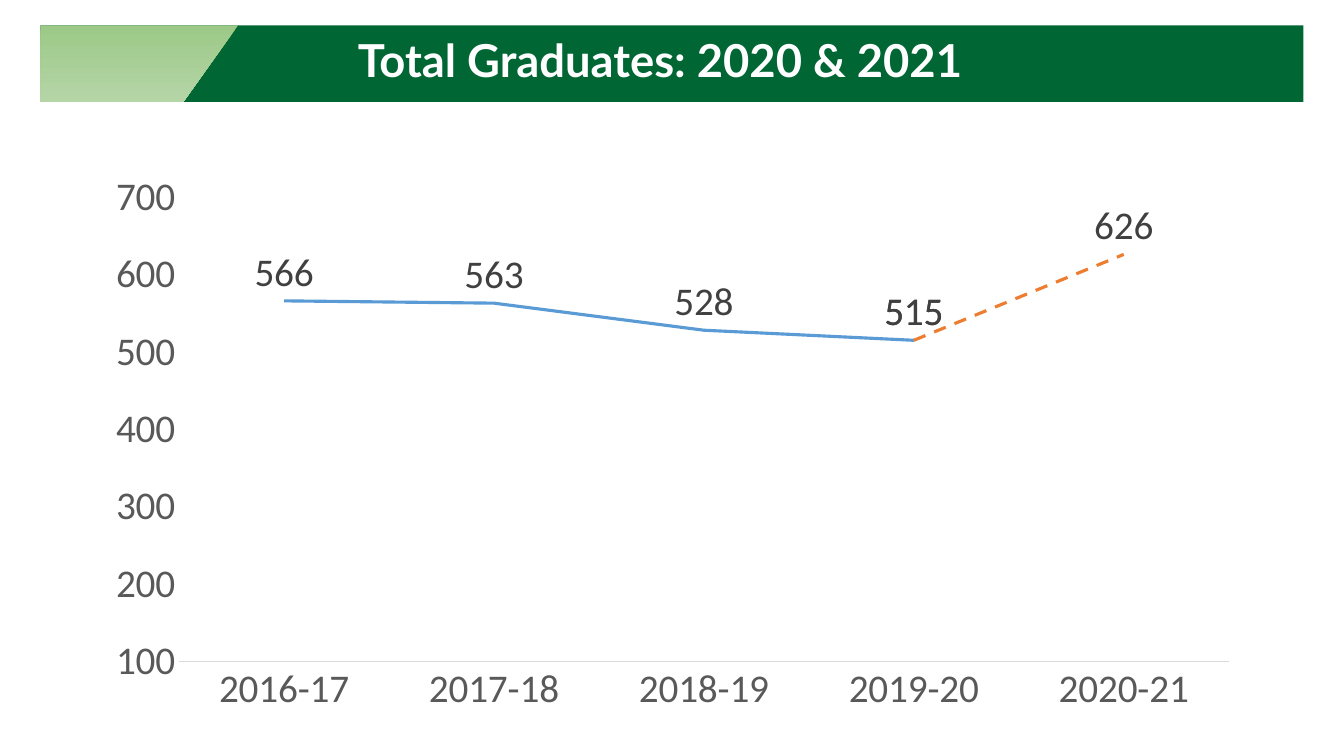
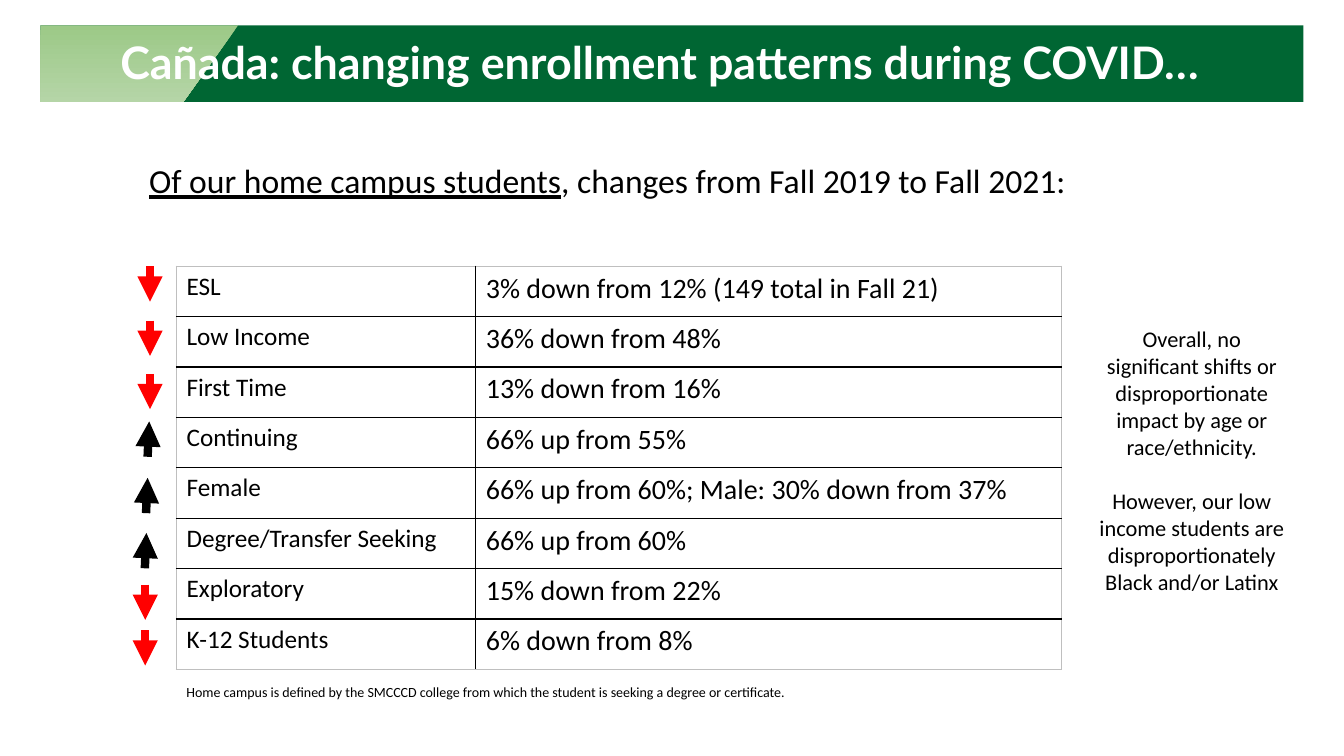
"""Build two slides on graduates and enrollment patterns."""
from dataclasses import dataclass

from lxml.etree import SubElement
from pptx import Presentation
from pptx.chart.data import CategoryChartData
from pptx.chart.series import LineSeries
from pptx.dml.color import RGBColor
from pptx.enum.chart import XL_CHART_TYPE, XL_LABEL_POSITION, XL_TICK_MARK
from pptx.enum.dml import MSO_LINE
from pptx.enum.shapes import MSO_CONNECTOR, MSO_SHAPE
from pptx.enum.text import MSO_ANCHOR, PP_ALIGN
from pptx.oxml.ns import qn
from pptx.presentation import Presentation as Deck
from pptx.slide import Slide
from pptx.table import _Cell
from pptx.text.text import Font, TextFrame
from pptx.util import Cm, Pt

BLACK = RGBColor(0x00, 0x00, 0x00)
WHITE = RGBColor(0xFF, 0xFF, 0xFF)
RED = RGBColor(0xFF, 0x00, 0x00)
GREEN = RGBColor(0x00, 0x66, 0x33)
LEAF_TOP = RGBColor(0x9C, 0xC9, 0x87)
LEAF_BOTTOM = RGBColor(0xB5, 0xD5, 0xA7)
AXIS_TEXT = RGBColor(0x59, 0x59, 0x59)
LABEL_TEXT = RGBColor(0x40, 0x40, 0x40)
AXIS_LINE = RGBColor(0xD9, 0xD9, 0xD9)
TABLE_EDGE = RGBColor(0xBF, 0xBF, 0xBF)
BLUE = RGBColor(0x5B, 0x9B, 0xD5)
ORANGE = RGBColor(0xED, 0x7D, 0x31)
TITLE_FONT = "Lato"
BODY_FONT = "Calibri"
ARROW_LENGTH = 0.89
ARROW_LEAN = 0.04


@dataclass(frozen=True)
class Box:
    """Position and size in centimetres."""
    left: float
    top: float
    width: float
    height: float

    def lengths(self) -> tuple[Cm, Cm, Cm, Cm]:
        """Return the four values as lengths."""
        return Cm(self.left), Cm(self.top), Cm(self.width), Cm(self.height)


@dataclass(frozen=True)
class Trend:
    """One line of the graduates chart."""
    name: str
    values: tuple[int | None, ...]
    color: RGBColor
    dash: MSO_LINE


@dataclass(frozen=True)
class Group:
    """One table row with the place of its arrow."""
    label: str
    change: str
    up: bool
    arrow_x: float
    arrow_top: float


BAND = Box(1.02, 0.64, 31.83, 1.93)
TITLE = Box(2.03, 0.89, 29.21, 1.47)
CHART = Box(2.34, 4.09, 29.21, 14.15)
SUBTITLE = Box(3.51, 3.91, 26.77, 2.31)
TABLE = Box(4.45, 6.71, 22.3, 10.16)
REMARK = Box(27.43, 8.08, 5.21, 7.09)
FOOTNOTE = Box(4.45, 17.09, 18.64, 1.55)
COLUMNS = (7.54, 14.76)
SIZES = (18, 20)
YEARS = ("2016-17", "2017-18", "2018-19", "2019-20", "2020-21")
TRENDS = (
    Trend("Actual", (566, 563, 528, 515, None), BLUE, MSO_LINE.SOLID),
    Trend("Latest", (None, None, None, 515, 626), ORANGE, MSO_LINE.DASH),
)
GROUPS = (
    Group("ESL", "3% down from 12% (149 total in Fall 21)", False, 3.78, 6.71),
    Group("Low Income", "36% down from 48%", False, 3.78, 8.08),
    Group("First Time", "13% down from 16%", False, 3.78, 9.42),
    Group("Continuing", "66% up from 55%", True, 3.76, 10.62),
    Group("Female", "66% up from 60%; Male: 30% down from 37%", True, 3.72, 12.04),
    Group("Degree/Transfer Seeking", "66% up from 60%", True, 3.69, 13.43),
    Group("Exploratory", "15% down from 22%", False, 3.66, 14.73),
    Group("K-12 Students", "6% down from 8%", False, 3.66, 15.88),
)


def style(font: Font, size: float, color: RGBColor = BLACK,
          name: str = BODY_FONT) -> None:
    """Set size, colour and typeface of a font."""
    font.size = Pt(size)
    font.color.rgb = color
    font.name = name


def add_text(s: Slide, box: Box, text: str, size: float,
             color: RGBColor = BLACK, name: str = BODY_FONT) -> TextFrame:
    """Add a wrapping text box and format its runs."""
    tf = s.shapes.add_textbox(*box.lengths()).text_frame
    tf.word_wrap = True
    tf.text = text
    for p in tf.paragraphs:
        for r in p.runs:
            style(r.font, size, color, name)
    return tf


def add_header(s: Slide, title: str, size: float, spacing: float) -> None:
    """Draw the green band, its light corner and the title."""
    band = s.shapes.add_shape(MSO_SHAPE.RECTANGLE, *BAND.lengths())
    band.fill.solid()
    band.fill.fore_color.rgb = GREEN
    left, top, bottom = BAND.left, BAND.top, BAND.top + BAND.height
    builder = s.shapes.build_freeform(Cm(left), Cm(top))
    corners = ((6, top), (4.62, bottom), (left, bottom))
    builder.add_line_segments([(Cm(x), Cm(y)) for x, y in corners])
    leaf = builder.convert_to_shape()
    leaf.fill.gradient()
    leaf.fill.gradient_angle = 270
    for stop, color in zip(leaf.fill.gradient_stops, (LEAF_TOP, LEAF_BOTTOM)):
        stop.color.rgb = color
    for sp in (band, leaf):
        sp.shadow.inherit = False
        sp.line.fill.background()
    tf = add_text(s, TITLE, title, size, WHITE, TITLE_FONT)
    tf.vertical_anchor = MSO_ANCHOR.MIDDLE
    p = tf.paragraphs[0]
    p.alignment = PP_ALIGN.CENTER
    p.line_spacing = spacing
    p.runs[0].font.bold = True


def style_trend(series: LineSeries, trend: Trend) -> None:
    """Format one chart line and its value labels."""
    series.smooth = False
    line = series.format.line
    line.color.rgb = trend.color
    line.width = Pt(2.25)
    line.dash_style = trend.dash
    labels = series.data_labels
    labels.show_value = True
    labels.position = XL_LABEL_POSITION.ABOVE
    style(labels.font, 28, LABEL_TEXT)


def add_graduates_chart(s: Slide) -> None:
    """Add the line chart of graduates by year."""
    data = CategoryChartData()
    data.categories = YEARS
    for trend in TRENDS:
        data.add_series(trend.name, trend.values)
    chart = s.shapes.add_chart(XL_CHART_TYPE.LINE, *CHART.lengths(), data).chart
    chart.has_legend = False
    chart.has_title = False
    style(chart.font, 28)
    plot = chart.plots[0]
    plot.vary_by_categories = False
    for series, trend in zip(plot.series, TRENDS):
        style_trend(series, trend)
    years, counts = chart.category_axis, chart.value_axis
    for axis in (years, counts):
        axis.major_tick_mark = axis.minor_tick_mark = XL_TICK_MARK.NONE
        axis.has_major_gridlines = False
        style(axis.tick_labels.font, 28, AXIS_TEXT)
    years.format.line.color.rgb = AXIS_LINE
    years.format.line.width = Pt(0.75)
    counts.format.line.fill.background()
    counts.minimum_scale, counts.maximum_scale = 100, 700
    counts.major_unit = 100


def set_borders(cell: _Cell, edges: dict[str, bool]) -> None:
    """Draw outer edges in grey and inner edges in black."""
    tc_pr = cell._tc.get_or_add_tcPr()
    for tag, outer in edges.items():
        ln = SubElement(tc_pr, qn(f"a:{tag}"), w=str(Pt(1)))
        fill = SubElement(ln, qn("a:solidFill"))
        SubElement(fill, qn("a:srgbClr"), val=str(TABLE_EDGE if outer else BLACK))


def add_group_table(s: Slide) -> None:
    """Add the table of student groups."""
    rows, cols = len(GROUPS), len(COLUMNS)
    table = s.shapes.add_table(rows, cols, *TABLE.lengths()).table
    table.first_row = table.horz_banding = False
    for column, width in zip(table.columns, COLUMNS):
        column.width = Cm(width)
    for i, group in enumerate(GROUPS):
        for j, text in enumerate((group.label, group.change)):
            cell = table.cell(i, j)
            cell.text = text
            style(cell.text_frame.paragraphs[0].runs[0].font, SIZES[j])
            set_borders(cell, {"lnL": j == 0, "lnR": j == cols - 1,
                               "lnT": i == 0, "lnB": i == rows - 1})
            cell.fill.background()


def add_arrow(s: Slide, group: Group) -> None:
    """Draw a red arrow down or a black arrow up."""
    top = (group.arrow_x, group.arrow_top)
    lean = ARROW_LEAN if group.up else 0
    bottom = (group.arrow_x - lean, group.arrow_top + ARROW_LENGTH)
    start, end = (bottom, top) if group.up else (top, bottom)
    arrow = s.shapes.add_connector(
        MSO_CONNECTOR.STRAIGHT, *(Cm(v) for v in start + end))
    arrow.line.color.rgb = BLACK if group.up else RED
    arrow.line.width = Pt(6)
    SubElement(arrow.line._get_or_add_ln(), qn("a:tailEnd"), type="triangle")
    SubElement(arrow._element.spPr, qn("a:effectLst"))


def build_graduates(prs: Deck) -> None:
    """Build the slide with the graduates chart."""
    s = prs.slides.add_slide(prs.slide_layouts[6])
    add_graduates_chart(s)
    add_header(s, "Total Graduates: 2020 & 2021", 32.4, 0.8)


def build_enrollment(prs: Deck) -> None:
    """Build the slide with the enrollment table."""
    s = prs.slides.add_slide(prs.slide_layouts[6])
    add_header(s, "Cañada: changing enrollment patterns during COVID…", 32, 0.9)
    p = add_text(s, SUBTITLE, "Of our home campus students", 24).paragraphs[0]
    p.runs[0].font.underline = True
    r = p.add_run()
    r.text = ", changes from Fall 2019 to Fall 2021:"
    style(r.font, 24)
    add_group_table(s)
    for group in GROUPS:
        add_arrow(s, group)
    remark = add_text(
        s, REMARK,
        "Overall, no significant shifts or disproportionate impact by age or "
        "race/ethnicity.\nHowever, our low income students are "
        "disproportionately Black and/or Latinx", 16)
    for p in remark.paragraphs:
        p.alignment = PP_ALIGN.CENTER
    remark.paragraphs[1].space_before = Pt(19.5)
    add_text(s, FOOTNOTE, "Home campus is defined by the SMCCCD college from "
             "which the student is seeking a degree or certificate.", 10)


def main() -> None:
    """Build and save the presentation."""
    prs = Presentation()
    prs.slide_width, prs.slide_height = Cm(33.87), Cm(19.05)
    build_graduates(prs)
    build_enrollment(prs)
    prs.save("out.pptx")


if __name__ == "__main__":
    main()
